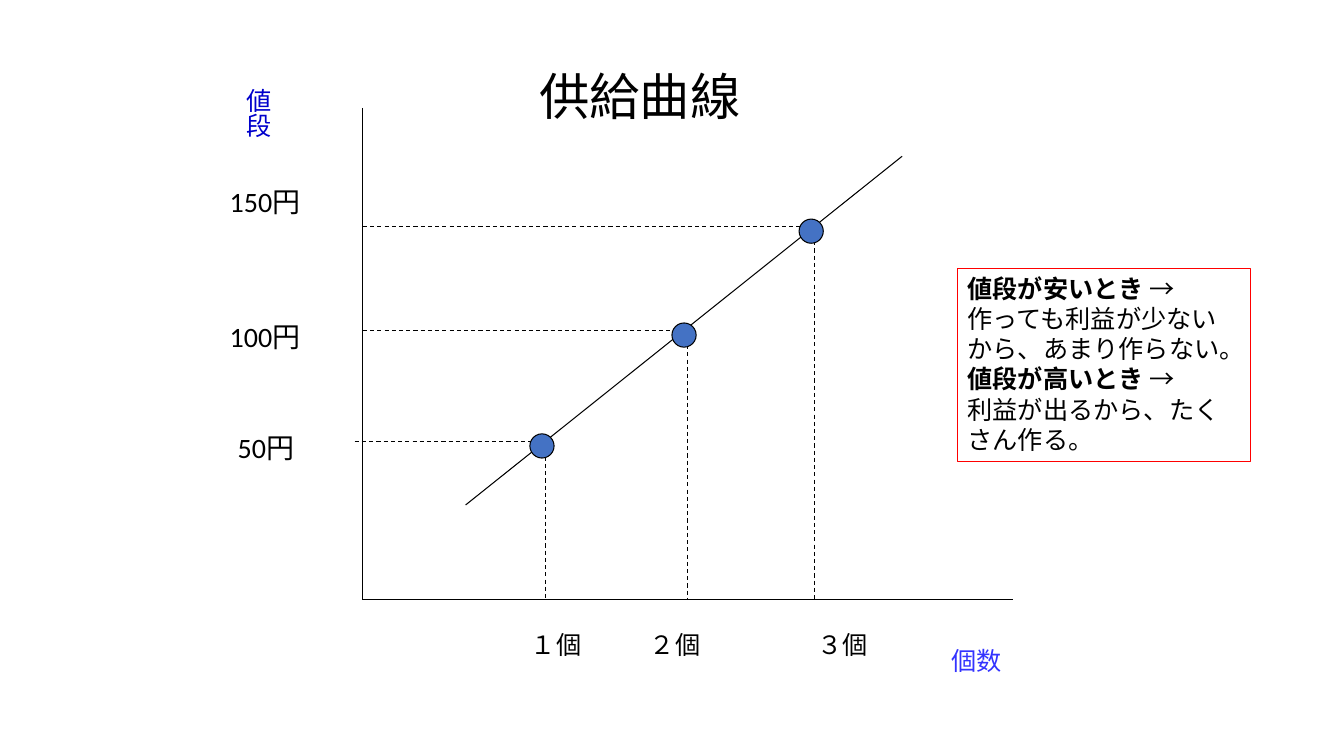
"""Build the supply curve slide."""
from dataclasses import dataclass

from lxml import etree
from pptx import Presentation
from pptx.dml.color import RGBColor
from pptx.enum.dml import MSO_LINE
from pptx.enum.shapes import MSO_CONNECTOR, MSO_SHAPE
from pptx.enum.text import MSO_ANCHOR, MSO_AUTO_SIZE, PP_ALIGN
from pptx.oxml.ns import qn
from pptx.util import Pt

STRAIGHT = MSO_CONNECTOR.STRAIGHT
OVAL = MSO_SHAPE.OVAL
RECTANGLE = MSO_SHAPE.RECTANGLE
DASH = MSO_LINE.DASH
TOP = MSO_ANCHOR.TOP
LEFT = PP_ALIGN.LEFT
GROW = MSO_AUTO_SIZE.SHAPE_TO_FIT_TEXT


@dataclass(frozen=True)
class Theme:
    font: str = "Calibri"
    black: RGBColor = RGBColor(0x00, 0x00, 0x00)
    quantity_blue: RGBColor = RGBColor(0x33, 0x33, 0xFF)
    price_blue: RGBColor = RGBColor(0x00, 0x00, 0xCC)
    dot_blue: RGBColor = RGBColor(0x44, 0x72, 0xC4)
    red: RGBColor = RGBColor(0xFF, 0x00, 0x00)
    title_size: float = 36
    price_size: float = 20
    body_size: float = 18
    line_width: float = 0.75


@dataclass(frozen=True)
class Label:
    text: str
    left: float
    top: float
    width: float
    height: float
    size: float
    color: RGBColor
    vertical: bool = False


@dataclass(frozen=True)
class Segment:
    x1: float
    y1: float
    x2: float
    y2: float
    dashed: bool = False


@dataclass(frozen=True)
class SupplyPoint:
    x: float
    y: float
    guide_left: float
    guide_top: float


@dataclass(frozen=True)
class Case:
    heading: str
    outcome: str


THEME = Theme()
AXIS_X, AXIS_Y = 259.2, 428.4
DOT_SIZE = 17.3
DOT_DX, DOT_DY = -11, -5.5

SOLID_LINES = [
    Segment(AXIS_X, 77, AXIS_X, AXIS_Y),
    Segment(AXIS_X, AXIS_Y, 723.6, AXIS_Y),
    Segment(332.6, 360.7, 644.4, 111.6),
]
SUPPLY_POINTS = [
    SupplyPoint(491, 236.2, AXIS_X, 236.2),
    SupplyPoint(389.5, 315.4, 253.4, 321.1),
    SupplyPoint(581.8, 162, AXIS_X, 162),
]
LABELS = [
    Label("個数", 672.5, 457.2, 124.6, 29, THEME.body_size, THEME.quantity_blue),
    Label("値段", 162.7, 56.2, 36, 124.6, THEME.body_size, THEME.price_blue, True),
    Label("１個", 372.2, 445.7, 73.4, 29, THEME.body_size, THEME.black),
    Label("２個", 457.2, 445.7, 85, 29, THEME.body_size, THEME.black),
    Label("３個", 576.7, 445.7, 73.4, 29, THEME.body_size, THEME.black),
    Label("100円", 157, 224.6, 85, 31, THEME.price_size, THEME.black),
    Label("50円", 162.7, 303.8, 96.5, 31, THEME.price_size, THEME.black),
    Label("150円", 157, 128.2, 85, 31, THEME.price_size, THEME.black),
    Label("供給曲線", 378, 43.2, 187.2, 50.4, THEME.title_size, THEME.black),
]
CASES = [
    Case("値段が安いとき ", "作っても利益が少ないから、あまり作らない。"),
    Case("値段が高いとき ", "利益が出るから、たくさん作る。"),
]


def style_font(paragraph, size: float, color: RGBColor) -> None:
    paragraph.alignment = LEFT
    paragraph.font.name = THEME.font
    paragraph.font.size = Pt(size)
    paragraph.font.color.rgb = color


def draw_segment(slide, segment: Segment) -> None:
    ends = (segment.x1, segment.y1, segment.x2, segment.y2)
    connector = slide.shapes.add_connector(STRAIGHT, *map(Pt, ends))
    connector.line.color.rgb = THEME.black
    connector.line.width = Pt(THEME.line_width)
    if segment.dashed:
        connector.line.dash_style = DASH
    etree.SubElement(connector._element.spPr, qn("a:effectLst"))


def draw_guides(slide, point: SupplyPoint) -> None:
    draw_segment(slide, Segment(point.guide_left, point.y, point.x, point.y, True))
    draw_segment(slide, Segment(point.x, point.guide_top, point.x, AXIS_Y, True))


def draw_label(slide, label: Label) -> None:
    bounds = (label.left, label.top, label.width, label.height)
    frame = slide.shapes.add_textbox(*map(Pt, bounds)).text_frame
    frame.word_wrap = True
    frame.auto_size = GROW
    if label.vertical:
        frame._txBody.bodyPr.set("vert", "eaVert")
    frame.text = label.text
    style_font(frame.paragraphs[0], label.size, label.color)


def draw_dot(slide, point: SupplyPoint) -> None:
    bounds = (point.x + DOT_DX, point.y + DOT_DY, DOT_SIZE, DOT_SIZE)
    dot = slide.shapes.add_shape(OVAL, *map(Pt, bounds))
    dot.shadow.inherit = False
    dot.fill.solid()
    dot.fill.fore_color.rgb = THEME.dot_blue
    dot.line.color.rgb = THEME.black
    dot.line.width = Pt(THEME.line_width)


def draw_explanation(slide, cases: list[Case]) -> None:
    explanation = slide.shapes.add_shape(
        RECTANGLE, Pt(684), Pt(191.5), Pt(209.5), Pt(138.2))
    explanation.shadow.inherit = False
    explanation.fill.background()
    explanation.line.color.rgb = THEME.red
    explanation.line.width = Pt(THEME.line_width)
    frame = explanation.text_frame
    frame.word_wrap = True
    frame.auto_size = GROW
    frame.vertical_anchor = TOP
    for index, case in enumerate(cases):
        heading = frame.add_paragraph() if index else frame.paragraphs[0]
        style_font(heading, THEME.body_size, THEME.black)
        for text, bold in ((case.heading, True), ("→", False)):
            run = heading.add_run()
            run.text = text
            run.font.bold = bold
        outcome = frame.add_paragraph()
        outcome.text = case.outcome
        style_font(outcome, THEME.body_size, THEME.black)


def main() -> None:
    presentation = Presentation()
    presentation.slide_width, presentation.slide_height = Pt(960), Pt(540)
    slide = presentation.slides.add_slide(presentation.slide_layouts[6])
    for segment in SOLID_LINES:
        draw_segment(slide, segment)
    for point in SUPPLY_POINTS:
        draw_guides(slide, point)
    for label in LABELS:
        draw_label(slide, label)
    for point in SUPPLY_POINTS:
        draw_dot(slide, point)
    draw_explanation(slide, CASES)
    presentation.save("out.pptx")


if __name__ == "__main__":
    main()
